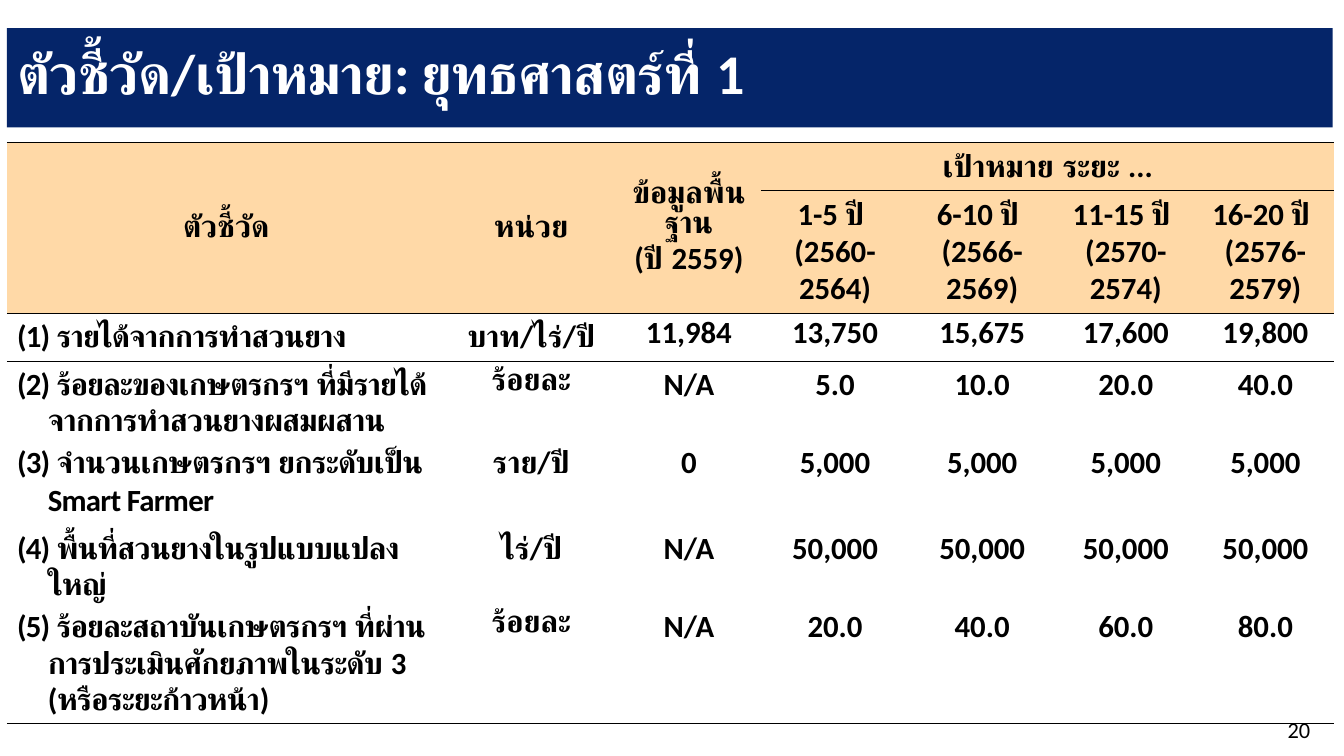
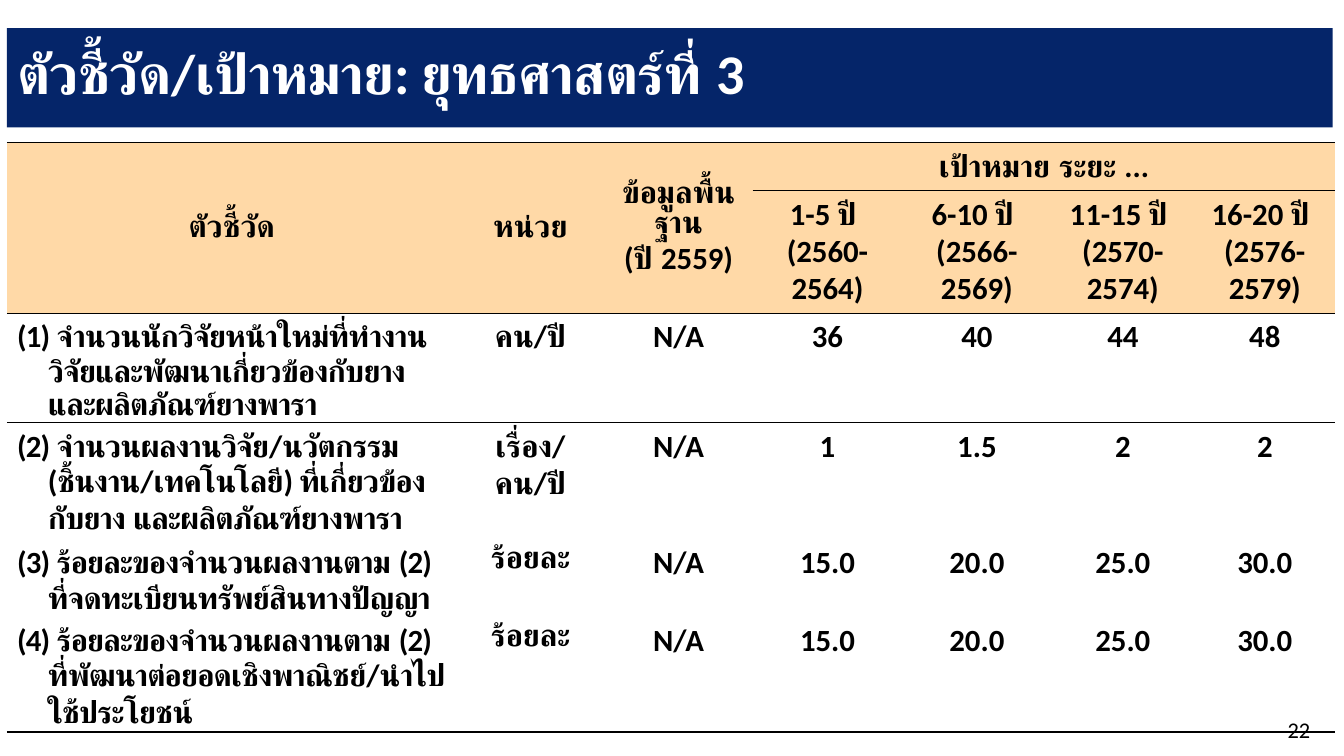
import pptx
import pptx.dml.color
import pptx.enum.text
import pptx.oxml
import pptx.oxml.ns
import pptx.util

Pt = pptx.util.Pt
qn = pptx.oxml.ns.qn
PP_ALIGN = pptx.enum.text.PP_ALIGN
MSO_ANCHOR = pptx.enum.text.MSO_ANCHOR

COLORS = {"band": "052569", "header": "FFD9A7", "text": "000000", "light": "FFFFFF"}
TITLE_FONT = {"name": "Calibri", "size": Pt(40), "bold": True}
CELL_FONT = {"name": "Calibri", "size": Pt(22), "bold": True}
NUMBER_FONT = {"name": "Calibri", "size": Pt(16), "bold": False}
TIGHT_MARGINS = {"margin_left": Pt(0.7), "margin_top": Pt(0.7),
                 "margin_right": Pt(0.7), "margin_bottom": Pt(0)}
PLAIN_TABLE_STYLE = "{2D5ABB26-0587-4C30-8999-92F81FD0307C}"
LEFT = 5
HEADER_ROWS = 2
FIRST_TARGET = 3
CELL_MARGIN = 3.6
NATURAL_PITCH = 26.8

HEADINGS = ["ตัวชี้วัด", "หน่วย", "ข้อมูลพื้นฐาน\n(ปี 2559)", "เป้าหมาย ระยะ ..."]
PERIODS = ["1-5 ปี \n(2560-2564)", "6-10 ปี \n(2566-2569)",
           "11-15 ปี \n(2570-2574)", "16-20 ปี \n(2576-2579)"]

SLIDES = [
    {
        "title": "ตัวชี้วัด/เป้าหมาย: ยุทธศาสตร์ที่ 1",
        "number": "20",
        "columns": [313.2, 122.4, 103, 105.8, 104.4, 100.8, 98.6],
        "rows": [34, 88, 34, 56, 61, 56, 86],
        "pitches": [26.7, 24.3, 26.8, 24.3, 26.2],
        "tight_row": HEADER_ROWS,
        "data": [
            ["(1) รายได้จากการทำสวนยาง", "บาท/ไร่/ปี",
             "11,984", "13,750", "15,675", "17,600", "19,800"],
            ["(2) ร้อยละของเกษตรกรฯ ที่มีรายได้จากการทำสวนยางผสมผสาน", "ร้อยละ",
             "N/A", "5.0", "10.0", "20.0", "40.0"],
            ["(3) จำนวนเกษตรกรฯ ยกระดับเป็น Smart Farmer", "ราย/ปี",
             "0", "5,000", "5,000", "5,000", "5,000"],
            ["(4) พื้นที่สวนยางในรูปแบบแปลงใหญ่", "ไร่/ปี",
             "N/A", "50,000", "50,000", "50,000", "50,000"],
            ["(5) ร้อยละสถาบันเกษตรกรฯ ที่ผ่านการประเมินศักยภาพในระดับ 3 (หรือระยะก้าวหน้า)",
             "ร้อยละ", "N/A", "20.0", "40.0", "60.0", "80.0"],
        ],
    },
    {
        "title": "ตัวชี้วัด/เป้าหมาย: ยุทธศาสตร์ที่ 3",
        "number": "22",
        "columns": [321, 105.8, 105.8, 107, 106.5, 102, 100.8],
        "rows": [34, 88, 78, 83, 56, 82],
        "pitches": [23.5, 25.2, 24.3, 24.9],
        "tight_row": None,
        "data": [
            ["(1) จำนวนนักวิจัยหน้าใหม่ที่ทำงานวิจัยและพัฒนาเกี่ยวข้องกับยาง และผลิตภัณฑ์ยางพารา",
             "คน/ปี", "N/A", "36", "40", "44", "48"],
            ["(2) จำนวนผลงานวิจัย/นวัตกรรม (ชิ้นงาน/เทคโนโลยี) ที่เกี่ยวข้องกับยาง และผลิตภัณฑ์ยางพารา",
             "เรื่อง/คน/ปี", "N/A", "1", "1.5", "2", "2"],
            ["(3) ร้อยละของจำนวนผลงานตาม (2) ที่จดทะเบียนทรัพย์สินทางปัญญา",
             "ร้อยละ", "N/A", "15.0", "20.0", "25.0", "30.0"],
            ["(4) ร้อยละของจำนวนผลงานตาม (2) ที่พัฒนาต่อยอดเชิงพาณิชย์/นำไปใช้ประโยชน์",
             "ร้อยละ", "N/A", "15.0", "20.0", "25.0", "30.0"],
        ],
    },
]


def apply_format(target, values):
    for name, value in values.items():
        setattr(target, name, value)


def rgb(name):
    return pptx.dml.color.RGBColor.from_string(COLORS[name])


def set_fill(target, color):
    target.fill.solid()
    target.fill.fore_color.rgb = rgb(color)


def write_text(text_frame, text, font, color, align, hanging=0, spacing=0):
    text_frame.text = text
    for paragraph in text_frame.paragraphs:
        paragraph.alignment = align
        if hanging:
            properties = paragraph._p.get_or_add_pPr()
            properties.set("marL", str(Pt(hanging)))
            properties.set("indent", str(-Pt(hanging)))
        for run in paragraph.runs:
            apply_format(run.font, font)
            run.font.color.rgb = rgb(color)
            if spacing:
                run._r.get_or_add_rPr().set("spc", str(int(spacing * 100)))


def format_title(slide, text):
    title = slide.shapes.title
    apply_format(title, {"left": Pt(LEFT), "top": Pt(20), "width": Pt(947), "height": Pt(71)})
    set_fill(title, "band")
    apply_format(title.text_frame, {
        "word_wrap": True,
        "auto_size": pptx.enum.text.MSO_AUTO_SIZE.NONE,
        "vertical_anchor": MSO_ANCHOR.MIDDLE,
    })
    write_text(title.text_frame, text, TITLE_FONT, "light", PP_ALIGN.LEFT, 169, -0.5)
    title.text_frame.paragraphs[0].line_spacing = 0.85


def add_slide_number(slide, number):
    box = slide.shapes.add_textbox(Pt(840), Pt(508), Pt(103), Pt(29))
    box.text_frame.word_wrap = True
    write_text(box.text_frame, number, NUMBER_FONT, "text", PP_ALIGN.RIGHT)


def add_border(cell, side):
    line = pptx.oxml.parse_xml(
        f'<a:{side} {pptx.oxml.ns.nsdecls("a")} w="{Pt(1)}"><a:solidFill>'
        f'<a:srgbClr val="{COLORS["text"]}"/></a:solidFill></a:{side}>')
    cell._tc.get_or_add_tcPr().insert(0, line)


def format_header(table):
    for row in range(HEADER_ROWS):
        for column in range(len(table.columns)):
            cell = table.cell(row, column)
            set_fill(cell, "header")
            cell.vertical_anchor = MSO_ANCHOR.MIDDLE
            if row == HEADER_ROWS - 1:
                add_border(cell, "lnB")
            if row == 0 or column >= FIRST_TARGET:
                add_border(cell, "lnT")
    for column in range(FIRST_TARGET):
        table.cell(0, column).merge(table.cell(1, column))
    table.cell(0, FIRST_TARGET).merge(table.cell(0, len(table.columns) - 1))
    headings = [(0, column, text) for column, text in enumerate(HEADINGS)]
    headings += [(1, column, text) for column, text in enumerate(PERIODS, FIRST_TARGET)]
    for row, column, text in headings:
        write_text(table.cell(row, column).text_frame, text, CELL_FONT, "text", PP_ALIGN.CENTER)


def write_indicator(cell, text, pitch):
    shift = NATURAL_PITCH - pitch
    apply_format(cell, {"margin_top": Pt(CELL_MARGIN + shift),
                        "margin_bottom": Pt(CELL_MARGIN - shift)})
    write_text(cell.text_frame, text, CELL_FONT, "text", PP_ALIGN.LEFT, 22, -0.5)
    cell.text_frame.paragraphs[0].line_spacing = Pt(pitch)


def fill_data(table, content):
    last_row = len(table.rows) - 1
    for row, texts in enumerate(content["data"], HEADER_ROWS):
        for column, text in enumerate(texts):
            cell = table.cell(row, column)
            cell.fill.background()
            if column == 0:
                write_indicator(cell, text, content["pitches"][row - HEADER_ROWS])
            else:
                write_text(cell.text_frame, text, CELL_FONT, "text", PP_ALIGN.CENTER)
            if row == content["tight_row"] and column >= 2:
                apply_format(cell, TIGHT_MARGINS)
            if row in (HEADER_ROWS, last_row):
                add_border(cell, "lnB")
            if row == HEADER_ROWS:
                add_border(cell, "lnT")


def add_indicator_table(slide, content):
    columns, rows = content["columns"], content["rows"]
    table = slide.shapes.add_table(len(rows), len(columns), Pt(LEFT), Pt(102),
                                   Pt(sum(columns)), Pt(sum(rows))).table
    apply_format(table, {"first_row": False, "horz_banding": False})
    table._tbl.tblPr.find(qn("a:tableStyleId")).text = PLAIN_TABLE_STYLE
    for column, width in zip(table.columns, columns):
        column.width = Pt(width)
    for row, height in zip(table.rows, rows):
        row.height = Pt(height)
    format_header(table)
    fill_data(table, content)


def main():
    presentation = pptx.Presentation()
    apply_format(presentation, {"slide_width": Pt(960), "slide_height": Pt(540)})
    title_only = presentation.slide_layouts.get_by_name("Title Only")
    for content in SLIDES:
        slide = presentation.slides.add_slide(title_only)
        format_title(slide, content["title"])
        add_slide_number(slide, content["number"])
        add_indicator_table(slide, content)
    presentation.save("out.pptx")


if __name__ == "__main__":
    main()
